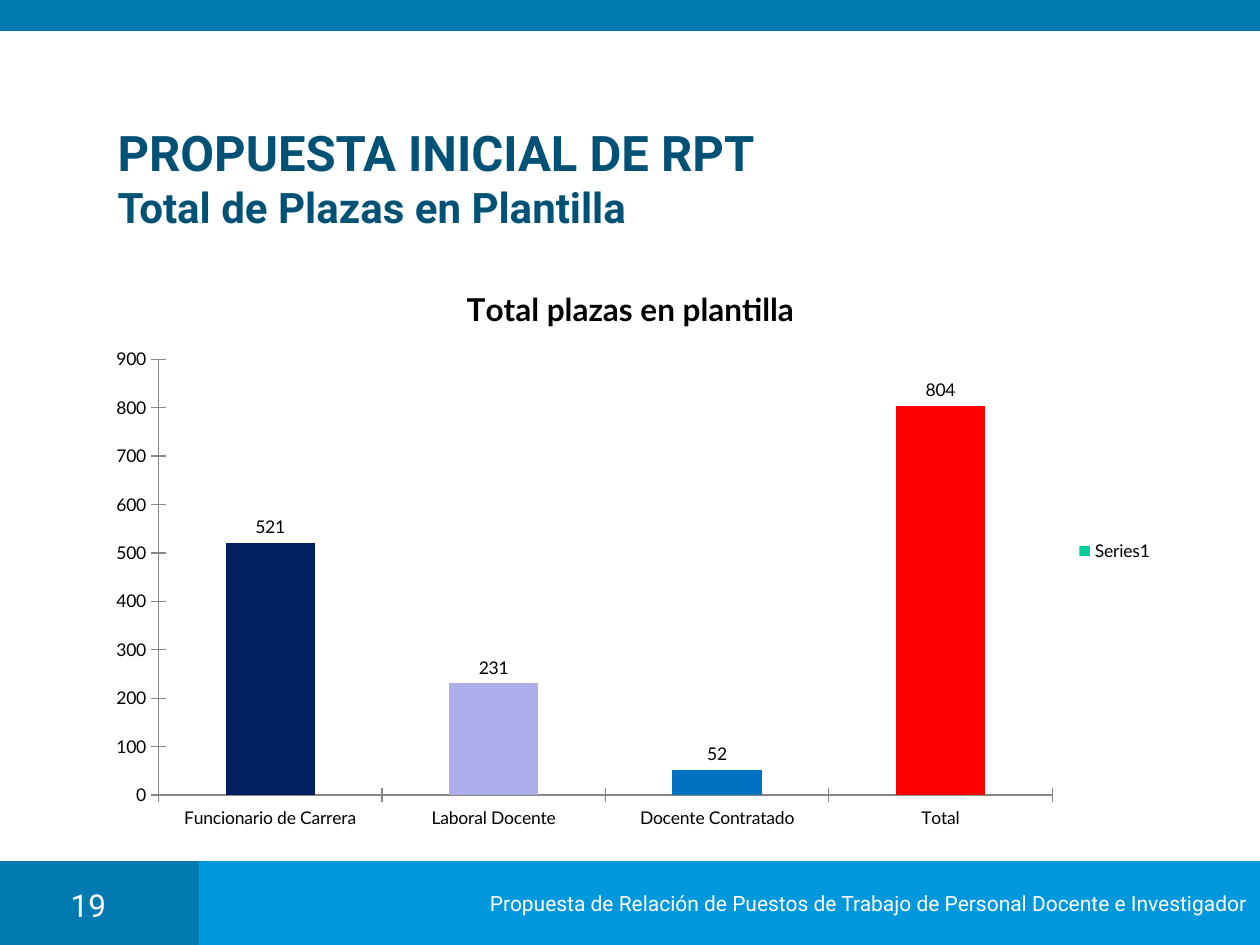
from pptx import Presentation
from pptx.chart.data import CategoryChartData
from pptx.dml.color import RGBColor
from pptx.enum.chart import XL_CHART_TYPE, XL_LABEL_POSITION, XL_LEGEND_POSITION, XL_TICK_MARK
from pptx.enum.shapes import MSO_SHAPE
from pptx.enum.text import MSO_ANCHOR, MSO_AUTO_SIZE, PP_ALIGN
from pptx.util import Pt

# Content
HEADING = [("PROPUESTA INICIAL DE RPT", "title"), ("Total de Plazas en Plantilla", "subtitle")]
FOOTER = "Propuesta de Relación de Puestos de Trabajo de Personal Docente e Investigador"
PAGE_NUMBER = "19"
CHART_TITLE = "Total plazas en plantilla"
SERIES_NAME = "Series1"
POSTS = [  # category, posts, bar colour
    ("Funcionario de Carrera", 521, "navy"),
    ("Laboral Docente", 231, "lilac"),
    ("Docente Contratado", 52, "blue"),
    ("Total", 804, "red"),
]

THEME = {
    "font": "Roboto", "chart_font": "Lato",
    "colors": {
        "dark": "007AB1", "light": "0098DC", "heading": "005176", "white": "FFFFFF",
        "black": "000000", "axis": "868686", "series": "00CC99",
        "navy": "002060", "lilac": "ADADEB", "blue": "0070C0", "red": "FF0000",
    },
    "sizes": {"title": 28, "subtitle": 24, "footer": 12, "page": 18,
              "chart": 10, "chart_title": 18},
}

# Geometry in px, 126 px to the inch
EMU_PER_PX = 914400 / 126
WIDTH, HEIGHT = 1260, 945
FOOTER_TOP = 861
FOOTER_HEIGHT = HEIGHT - FOOTER_TOP
FOOTER_LEFT = 199


def px(*lengths):
    return [round(length * EMU_PER_PX) for length in lengths]


def color(name):
    return RGBColor.from_string(THEME["colors"][name])


def style(font, size, ink, face=THEME["font"], bold=False):
    font.name, font.size, font.bold = face, Pt(THEME["sizes"][size]), bold
    font.color.rgb = color(ink)


def write(paragraph, text, align=PP_ALIGN.LEFT, **font_format):
    paragraph.alignment = align
    run = paragraph.add_run()
    run.text = text
    style(run.font, **font_format)


def add_band(shapes, box, fill):
    band = shapes.add_shape(MSO_SHAPE.RECTANGLE, *px(*box))
    band.shadow.inherit = False
    band.fill.solid()
    band.fill.fore_color.rgb = color(fill)
    band.line.fill.background()
    return band


def add_heading(title):
    title.left, title.top, title.width, title.height = px(105, 151, 1052, 53)
    frame = title.text_frame
    frame.auto_size = MSO_AUTO_SIZE.NONE
    frame.vertical_anchor = MSO_ANCHOR.MIDDLE
    paragraph = frame.paragraphs[0]
    for index, (line, size) in enumerate(HEADING):
        if index:
            paragraph.add_line_break()
        write(paragraph, line, size=size, ink="heading", bold=True)


def add_posts_chart(shapes):
    categories, values, bar_colors = zip(*POSTS)
    posts_data = CategoryChartData()
    posts_data.categories = categories
    posts_data.add_series(SERIES_NAME, values)
    chart = shapes.add_chart(XL_CHART_TYPE.COLUMN_CLUSTERED,
                             *px(95, 262, 1071, 578), posts_data).chart
    style(chart.font, "chart", "black", THEME["chart_font"])

    chart.has_title = True
    write(chart.chart_title.text_frame.paragraphs[0], CHART_TITLE, align=PP_ALIGN.CENTER,
          size="chart_title", ink="black", face=THEME["chart_font"], bold=True)
    chart.has_legend = True
    chart.legend.position = XL_LEGEND_POSITION.RIGHT
    chart.legend.include_in_layout = False

    for axis in (chart.category_axis, chart.value_axis):
        axis.major_tick_mark = XL_TICK_MARK.CROSS
        axis.has_major_gridlines = False
        axis.format.line.color.rgb = color("axis")
    chart.value_axis.minimum_scale, chart.value_axis.maximum_scale = 0, 900
    chart.value_axis.major_unit = 100

    # Bars and their labels
    plot = chart.plots[0]
    plot.vary_by_categories = False
    plot.gap_width = 150
    bars = plot.series[0]
    bars.format.fill.solid()
    bars.format.fill.fore_color.rgb = color("series")
    for index, bar_color in enumerate(bar_colors):
        fill = bars.points[index].format.fill
        fill.solid()
        fill.fore_color.rgb = color(bar_color)
    bars.data_labels.show_value = True
    bars.data_labels.position = XL_LABEL_POSITION.OUTSIDE_END


def main():
    deck = Presentation()
    deck.slide_width, deck.slide_height = px(WIDTH, HEIGHT)
    slide = deck.slides.add_slide(deck.slide_layouts[5])
    shapes = slide.shapes

    # Bands
    add_band(shapes, (0, FOOTER_TOP, 231, FOOTER_HEIGHT), "dark")
    footer = add_band(shapes, (FOOTER_LEFT, FOOTER_TOP, WIDTH - FOOTER_LEFT, FOOTER_HEIGHT), "light")
    footer.text_frame.word_wrap = False
    footer.text_frame.vertical_anchor = MSO_ANCHOR.MIDDLE
    write(footer.text_frame.paragraphs[0], FOOTER, align=PP_ALIGN.RIGHT,
          size="footer", ink="white")
    add_band(shapes, (0, 0, WIDTH, 31), "dark")

    # Heading, page number and chart
    add_heading(shapes.title)
    page = shapes.add_textbox(*px(44, 880, 89, 40))
    page.text_frame.word_wrap = True
    write(page.text_frame.paragraphs[0], PAGE_NUMBER, align=PP_ALIGN.CENTER,
          size="page", ink="white")
    add_posts_chart(shapes)

    deck.save("out.pptx")


if __name__ == "__main__":
    main()
